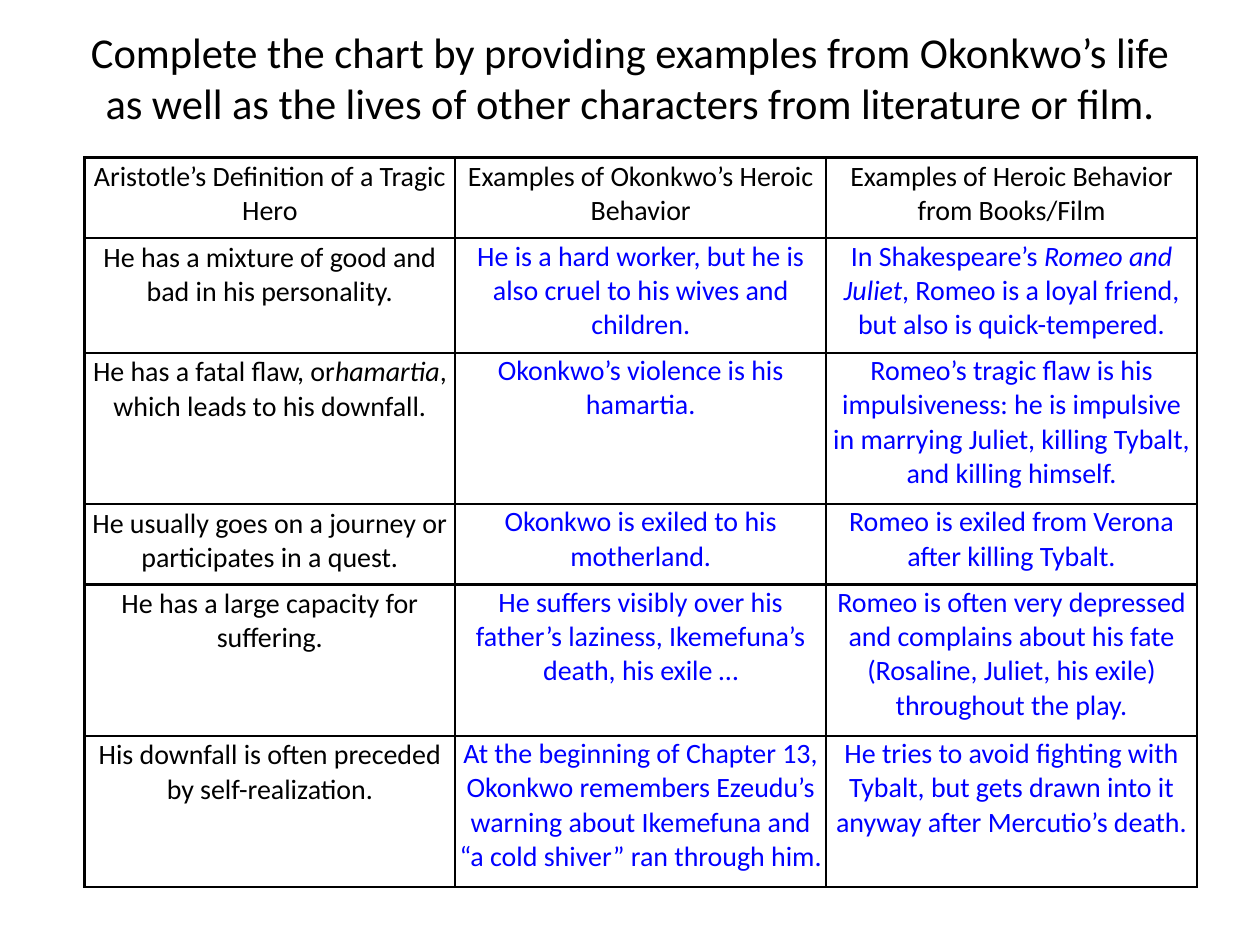
import pptx
import pptx.dml.color
import pptx.enum.text
import pptx.oxml
import pptx.oxml.ns
import pptx.util
from pptx.util import Inches

BLACK, BLUE, WHITE = "000000", "0000FF", "FFFFFF"

ROWS = [
    (0.64, "Aristotle’s Definition of a Tragic Hero",
     "Examples of Okonkwo’s Heroic Behavior",
     "Examples of Heroic Behavior from Books/Film"),
    (0.91, "He has a mixture of good and bad in his personality.",
     "He is a hard worker, but he is also cruel to his wives and children.",
     "In Shakespeare’s *Romeo and Juliet*, Romeo is a loyal friend, but also is quick-tempered."),
    (1.2, "He has a fatal flaw, or*hamartia*, which leads to his downfall.",
     "Okonkwo’s violence is his hamartia.",
     "Romeo’s tragic flaw is his impulsiveness: he is impulsive in marrying Juliet, "
     "killing Tybalt, and killing himself."),
    (0.64, "He usually goes on a journey or participates in a quest.",
     "Okonkwo is exiled to his motherland.",
     "Romeo is exiled from Verona after killing Tybalt."),
    (1.2, "He has a large capacity for suffering.",
     "He suffers visibly over his father’s laziness, Ikemefuna’s death, his exile …",
     "Romeo is often very depressed and complains about his fate (Rosaline, Juliet, his exile) "
     "throughout the play."),
    (1.2, "His downfall is often preceded by self-realization.",
     "At the beginning of Chapter 13, Okonkwo remembers Ezeudu’s warning about Ikemefuna "
     "and “a cold shiver” ran through him.",
     "He tries to avoid fighting with Tybalt, but gets drawn into it anyway "
     "after Mercutio’s death."),
]


def color(value):
    return pptx.dml.color.RGBColor.from_string(value)


def write_text(frame, text, size=16, fill=BLACK, font="Calibri"):
    paragraph = frame.paragraphs[0]
    paragraph.alignment = pptx.enum.text.PP_ALIGN.CENTER
    for index, part in enumerate(text.split("*")):
        run = paragraph.add_run()
        run.text = part
        run.font.name = font
        run.font.size = pptx.util.Pt(size)
        run.font.color.rgb = color(fill)
        run.font.bold = False
        run.font.italic = index % 2 == 1


def set_margins(target, horizontal, top, bottom):
    target.margin_left = target.margin_right = Inches(horizontal)
    target.margin_top = Inches(top)
    target.margin_bottom = Inches(bottom)


class SlideBuilder:
    border_width = pptx.util.Pt(1.5)
    border_color = BLACK

    def __init__(self, slide):
        self.slide = slide

    def title(self, text, left, top, width, height, size):
        shape = self.slide.shapes.title
        shape.left, shape.top = Inches(left), Inches(top)
        shape.width, shape.height = Inches(width), Inches(height)
        frame = shape.text_frame
        frame.word_wrap = True
        frame.auto_size = pptx.enum.text.MSO_AUTO_SIZE.NONE
        frame.vertical_anchor = pptx.enum.text.MSO_ANCHOR.MIDDLE
        set_margins(frame, 0.1, 0, 0.25)
        write_text(frame, text, size=size)

    def borders(self, cell):
        properties = cell._tc.get_or_add_tcPr()
        for side in ("lnL", "lnR", "lnT", "lnB"):
            properties.append(pptx.oxml.parse_xml(
                f'<a:{side} {pptx.oxml.ns.nsdecls("a")} w="{self.border_width}">'
                f'<a:solidFill><a:srgbClr val="{self.border_color}"/></a:solidFill>'
                f'</a:{side}>'))

    def table(self, rows, left, top, width):
        columns = len(rows[0]) - 1
        height = sum(row[0] for row in rows)
        table = self.slide.shapes.add_table(
            len(rows), columns, Inches(left), Inches(top),
            Inches(width), Inches(height)).table
        table.first_row = table.horz_banding = False
        for row_index, (row_height, *texts) in enumerate(rows):
            table.rows[row_index].height = Inches(row_height)
            for column_index, text in enumerate(texts):
                cell = table.cell(row_index, column_index)
                is_answer = row_index > 0 and column_index > 0
                horizontal, vertical = (0.03, 0.01) if is_answer else (0.02, 0.02)
                set_margins(cell, horizontal, vertical, vertical)
                self.borders(cell)
                cell.fill.solid()
                cell.fill.fore_color.rgb = color(WHITE)
                write_text(cell.text_frame, text, fill=BLUE if is_answer else BLACK)


def main():
    presentation = pptx.Presentation()
    presentation.slide_width = Inches(10)
    presentation.slide_height = Inches(7.5)
    builder = SlideBuilder(presentation.slides.add_slide(presentation.slide_layouts[5]))
    builder.title(
        "Complete the chart by providing examples from Okonkwo’s life "
        "as well as the lives of other characters from literature or film.",
        0.5, 0.3, 9, 0.87, size=24.3)
    builder.table(ROWS, 0.67, 1.25, 8.83)
    presentation.save("out.pptx")


if __name__ == "__main__":
    main()
